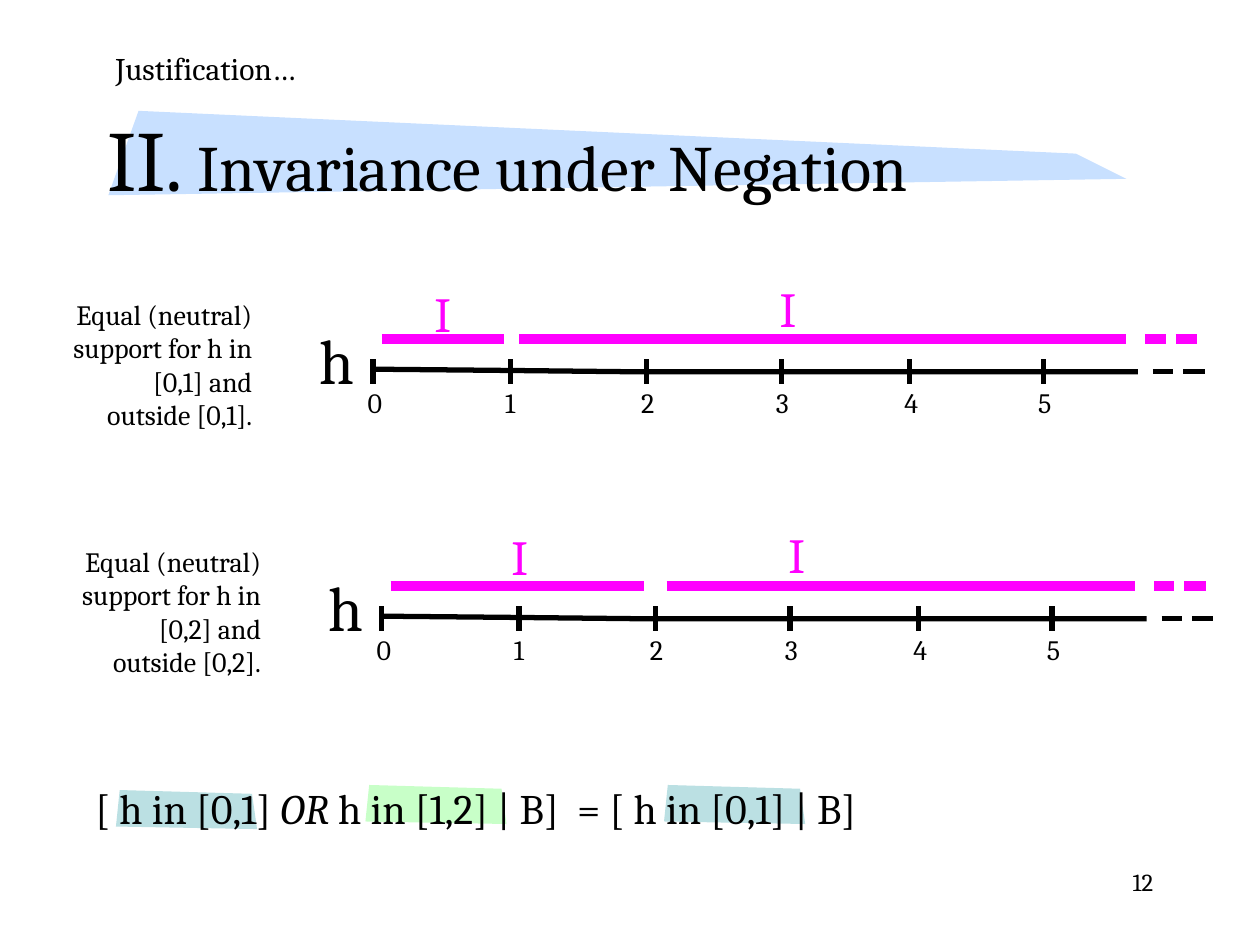
from pptx import Presentation
from pptx.dml.color import RGBColor
from pptx.enum.shapes import MSO_CONNECTOR
from pptx.enum.text import MSO_ANCHOR, MSO_AUTO_SIZE, PP_ALIGN
from pptx.oxml.ns import qn
from pptx.util import Inches, Pt
from lxml import etree

STRAIGHT = MSO_CONNECTOR.STRAIGHT
LEFT, RIGHT = PP_ALIGN.LEFT, PP_ALIGN.RIGHT
MIDDLE = MSO_ANCHOR.MIDDLE
NO_FIT, GROW = MSO_AUTO_SIZE.NONE, MSO_AUTO_SIZE.SHAPE_TO_FIT_TEXT

THEME = {
    "font": "Cambria",
    "ink": "000000", "support": "FF00FF", "banner": "C8E0FF",
    "teal": "BBE0E3", "green": "C8FFC8",
    "numeral": 49, "title": 37, "axis_name": 36, "mark": 28,
    "equation": 24, "kicker": 18, "note": 16, "page": 14,
    "axis_line": 3, "support_line": 6,
}

TITLE = [("II.", "numeral"), (" Invariance under Negation", "title")]
BANNER = [(1.1, 0.88), (8.54, 1.22), (8.94, 1.42), (0.86, 1.55)]

# Positions inside a panel are those of the first panel; the second is shifted.
PANELS = [
    {"note": "Equal (neutral) support for h in [0,1] and outside [0,1].",
     "shift": (0, 0),
     "bars": [(3.03, 4.0), (4.12, 8.94)],
     "marks": [(3.35, 2.2), (6.09, 2.16)]},
    {"note": "Equal (neutral) support for h in [0,2] and outside [0,2].",
     "shift": (0.07, 1.96),
     "bars": [(3.03, 5.04), (5.22, 8.94)],
     "marks": [(3.89, 2.17), (6.09, 2.15)]},
]
TICKS = [2.96, 4.05, 5.13, 6.2, 7.22, 8.28]
AXIS = [(2.95, 2.93), (4.0, 2.94), (4.98, 2.95), (9.03, 2.95)]
AXIS_Y, BAR_Y = 2.95, 2.69
AXIS_DASHES = [(9.15, 9.31), (9.39, 9.56)]
BAR_DASHES = [(9.09, 9.25), (9.33, 9.5)]
TICK_HALF = 0.1

EQUATION = [("[ h in [0,1] ", False), ("OR", True),
            (" h in [1,2] | B]  = [ h in [0,1] | B]", False)]
HIGHLIGHT = [(0.03, 0), (1.08, 0.03), (1.12, 0.31), (0, 0.29)]
HIGHLIGHT_SPOTS = [(0.92, 6.27, "teal"), (2.9, 6.23, "green"), (5.27, 6.23, "teal")]


def color(name):
    return RGBColor.from_string(THEME[name])


def add_run(para, text, size, ink="ink", italic=False):
    span = para.add_run()
    span.text = text
    span.font.name = THEME["font"]
    span.font.size = Pt(THEME[size])
    span.font.color.rgb = color(ink)
    span.font.italic = italic


def add_text(page, frame, text, size, ink="ink", align=LEFT, wrap=False):
    """Add a text box; text is a string or a list of (text, italic) runs."""
    box = page.shapes.add_textbox(*map(Inches, frame))
    box.text_frame.word_wrap = wrap
    box.text_frame.auto_size = GROW
    para = box.text_frame.paragraphs[0]
    para.alignment = align
    runs = [(text, False)] if isinstance(text, str) else text
    for words, italic in runs:
        add_run(para, words, size, ink, italic)


def add_outline(page, points, closed):
    corners = [(Inches(x), Inches(y)) for x, y in points]
    builder = page.shapes.build_freeform(*corners[0])
    builder.add_line_segments(corners[1:], close=closed)
    shape = builder.convert_to_shape()
    shape.shadow.inherit = False
    return shape


def add_patch(page, points, fill):
    patch = add_outline(page, points, True)
    patch.fill.solid()
    patch.fill.fore_color.rgb = color(fill)
    patch.line.fill.background()
    return patch


def style_line(line, ink, width):
    line.color.rgb = color(ink)
    line.width = Pt(THEME[width])


def add_line(page, start, end, ink="ink", width="axis_line"):
    connector = page.shapes.add_connector(STRAIGHT, *map(Inches, start + end))
    style_line(connector.line, ink, width)
    etree.SubElement(connector.element.spPr, qn("a:effectLst"))


def add_panel(page, panel):
    dx, dy = panel["shift"]

    def at(x, y):
        return x + dx, y + dy

    add_text(page, at(0.41, 2.31) + (1.69, 1.17), panel["note"], "note",
             align=RIGHT, wrap=True)
    axis = add_outline(page, [at(x, y) for x, y in AXIS], False)
    axis.fill.background()
    style_line(axis.line, "ink", "axis_line")
    add_text(page, at(2.44, 2.5) + (0.45, 0.7), "h", "axis_name")

    for number, x in enumerate(TICKS):
        add_line(page, at(x, AXIS_Y - TICK_HALF), at(x, AXIS_Y + TICK_HALF))
        add_text(page, at(x - 0.14, 3.01) + (0.31, 0.37), str(number), "note")
    for start, end in AXIS_DASHES:
        add_line(page, at(start, AXIS_Y), at(end, AXIS_Y))
    for start, end in panel["bars"] + BAR_DASHES:
        add_line(page, at(start, BAR_Y), at(end, BAR_Y), "support", "support_line")
    for x, y in panel["marks"]:
        add_text(page, at(x, y) + (0.33, 0.57), "I", "mark", "support")


def add_title(page):
    title = page.shapes.title
    title.left, title.top, title.width, title.height = map(
        Inches, (0.75, 0.91, 7.27, 0.67))
    frame = title.text_frame
    frame.auto_size = NO_FIT
    frame.vertical_anchor = MIDDLE
    para = frame.paragraphs[0]
    para.alignment = LEFT
    for text, size in TITLE:
        add_run(para, text, size)
    banner = add_patch(page, BANNER, "banner")
    title.element.addprevious(banner.element)  # the banner lies behind the title


def main():
    deck = Presentation()
    deck.slide_width, deck.slide_height = Inches(10), Inches(7.5)
    page = deck.slides.add_slide(deck.slide_layouts[5])

    add_title(page)
    add_text(page, (0.82, 0.34, 1.66, 0.4), "Justification…", "kicker")
    for panel in PANELS:
        add_panel(page, panel)
    for left, top, fill in HIGHLIGHT_SPOTS:
        add_patch(page, [(left + x, top + y) for x, y in HIGHLIGHT], fill)
    add_text(page, (0.66, 6.16, 6.47, 0.5), EQUATION, "equation")
    add_text(page, (7.17, 6.83, 2.08, 0.5), "12", "page", align=RIGHT, wrap=True)

    deck.save("out.pptx")


if __name__ == "__main__":
    main()
